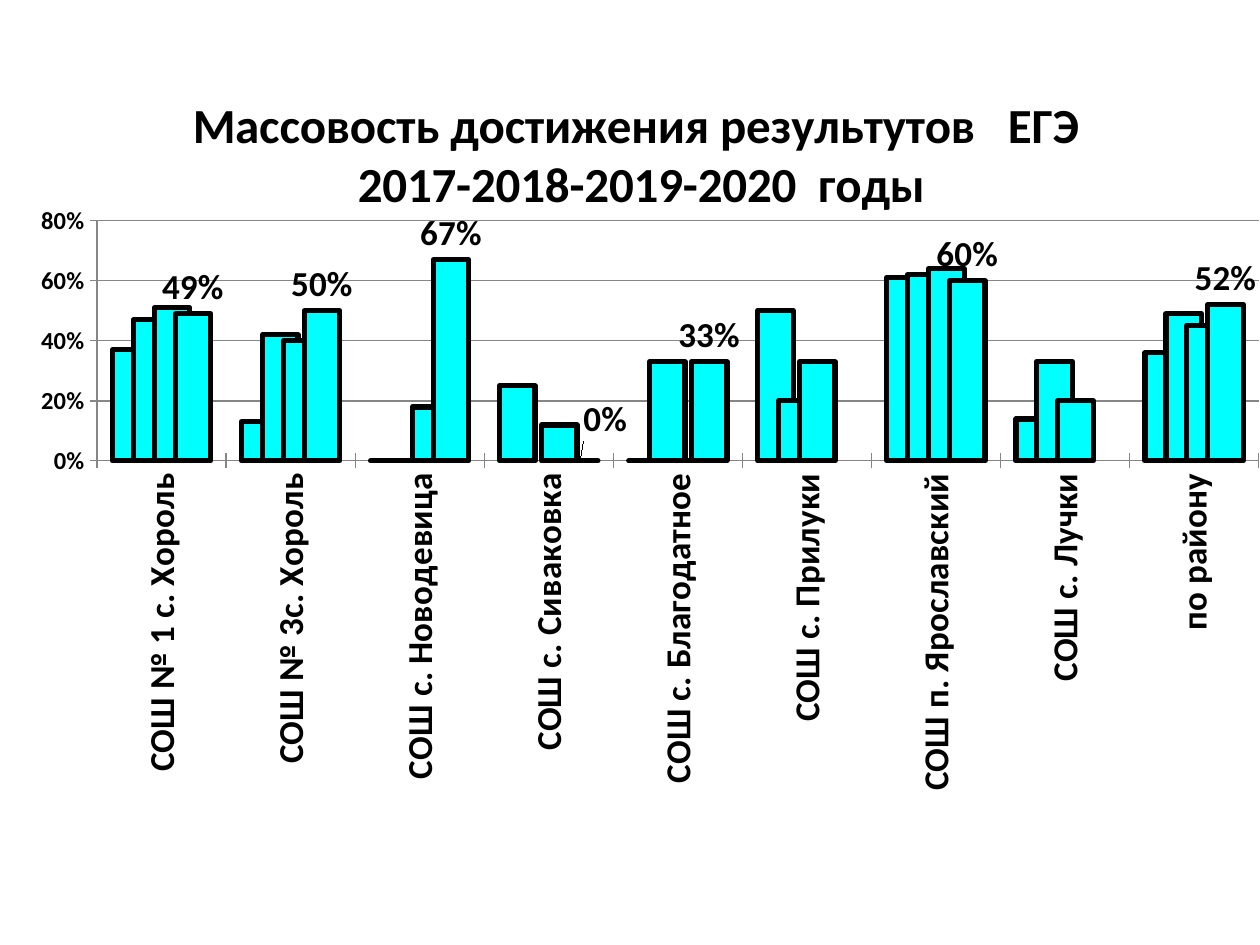
from lxml import etree
from pptx import Presentation
from pptx import util as u
from pptx.chart.data import CategoryChartData
from pptx.dml.color import RGBColor
from pptx.enum import chart as ch
from pptx.oxml import ns

PX = u.Inches(1) // 126
COLORS = {"text": "000000", "bar": "00FFFF", "outline": "000000", "grid": "868686"}
FONT = "Calibri"
HEADING = ("Массовость достижения результутов   ЕГЭ", " 2017-2018-2019-2020  годы")
SCHOOLS = ("СОШ № 1 с. Хороль", "СОШ № 3с. Хороль", "СОШ с. Новодевица",
           "СОШ с. Сиваковка", "СОШ с. Благодатное", "СОШ с. Прилуки",
           "СОШ п. Ярославский", "СОШ с. Лучки", "по району")
RESULTS = (
    (0.37, 0.13, 0, 0.25, 0, 0.5, 0.61, 0.14, 0.36),
    (0.47, 0.42, 0, None, 0.33, 0.2, 0.62, 0.33, 0.49),
    (0.51, 0.4, 0.18, 0.12, 0, 0.33, 0.64, 0.2, 0.45),
    (0.49, 0.5, 0.67, 0, 0.33, None, 0.6, None, 0.52),
)
SIVAKOVKA = 3


def color(key):
    return RGBColor.from_string(COLORS[key])


def style_font(font, size):
    font.name, font.size, font.bold = FONT, u.Pt(size), True
    font.color.rgb = color("text")


def set_layout(parent, index, **settings):
    """Give a chart part a manual layout, in fractions of the chart."""
    for old in parent.findall(ns.qn("c:layout")):
        parent.remove(old)
    layout = etree.Element(ns.qn("c:layout"))
    manual = etree.SubElement(layout, ns.qn("c:manualLayout"))
    for tag, value in settings.items():
        etree.SubElement(manual, ns.qn("c:" + tag)).set("val", str(value))
    parent.insert(index, layout)


def add_heading(chart):
    frame = chart.chart_title.text_frame
    for i, line in enumerate(HEADING):
        paragraph = frame.add_paragraph() if i else frame.paragraphs[0]
        run = paragraph.add_run()
        run.text = line
        style_font(run.font, 28)
    chart.chart_title.include_in_layout = False
    set_layout(chart.chart_title._element, 1, xMode="edge", yMode="edge", x=0.15, y=0.03)


def style_axes(chart):
    schools, share = chart.category_axis, chart.value_axis
    for axis, size in ((schools, 20), (share, 14)):
        style_font(axis.tick_labels.font, size)
        axis.major_tick_mark = ch.XL_TICK_MARK.CROSS
        axis.format.line.color.rgb = color("grid")
    # School names read upwards
    body = schools._element.find(ns.qn("c:txPr")).find(ns.qn("a:bodyPr"))
    body.set("rot", "-5400000")
    body.set("vert", "horz")
    share.minimum_scale, share.maximum_scale, share.major_unit = 0, 0.8, 0.2
    share.tick_labels.number_format = "0%"
    share.tick_labels.number_format_is_linked = False
    share.has_major_gridlines = True
    share.major_gridlines.format.line.color.rgb = color("grid")


def add_value_labels(series):
    labels = series.data_labels
    labels.show_value = True
    labels.number_format, labels.number_format_is_linked = "0%", False
    labels.position = ch.XL_LABEL_POSITION.OUTSIDE_END
    style_font(labels.font, 20)
    # The zero label stands to the right of its bar
    zero = series.points[SIVAKOVKA].data_label
    style_font(zero.font, 20)
    label = labels._element.find(ns.qn("c:dLbl"))
    set_layout(label, 1, x=0.02, y=-0.02)
    number = etree.Element(ns.qn("c:numFmt"), formatCode="0%", sourceLinked="0")
    label.insert(2, number)


def add_results_chart(slide, left, top, width, height):
    data = CategoryChartData(number_format="0%")
    data.categories = SCHOOLS
    for number, values in enumerate(RESULTS, 1):
        data.add_series(f"Series {number}", values)
    box = (length * PX for length in (left, top, width, height))
    chart = slide.shapes.add_chart(ch.XL_CHART_TYPE.COLUMN_CLUSTERED, *box, data).chart
    chart.has_legend = False
    chart.font.name, chart.font.size = FONT, u.Pt(10)
    add_heading(chart)
    style_axes(chart)

    # Overlapping outlined bars
    plot = chart.plots[0]
    plot.gap_width, plot.overlap, plot.vary_by_categories = 87, 41, False
    for series in plot.series:
        series.format.fill.solid()
        series.format.fill.fore_color.rgb = color("bar")
        series.format.line.color.rgb = color("outline")
        series.format.line.width = u.Pt(3)
    add_value_labels(plot.series[-1])
    area = chart._chartSpace.chart.plotArea
    set_layout(area, 0, layoutTarget="inner", xMode="edge", yMode="edge",
               x=0.077, y=0.203, w=0.922, h=0.321)


def main():
    deck = Presentation()
    deck.slide_width, deck.slide_height = 1260 * PX, 945 * PX
    slide = deck.slides.add_slide(deck.slide_layouts[6])
    add_results_chart(slide, 0, 69, 1260, 748)
    deck.save("out.pptx")


if __name__ == "__main__":
    main()
